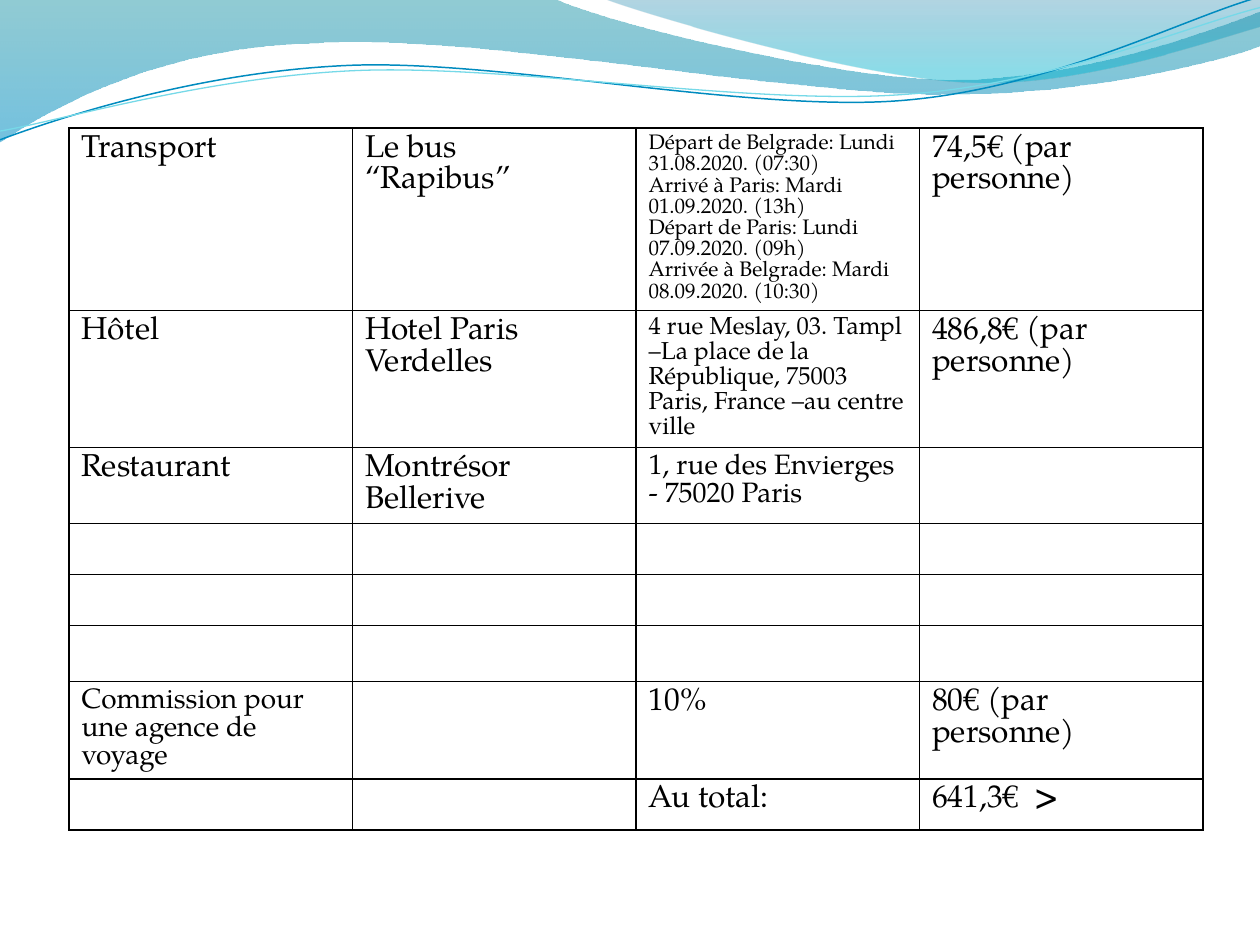
from lxml import etree
from pptx import Presentation, util as u
from pptx.dml.color import RGBColor
from pptx.oxml import ns

FONT = "TeX Gyre Pagella"
BLACK = "000000"
COLUMN_WIDTH = 162
ROW_HEIGHTS = [104.4, 78.2, 43.4, 29.2, 29.2, 32, 55.4, 29.2]

# Each path has a start point; a pair continues it as a line, six numbers as a curve.
BROAD_WAVE = [
    (0, 0), (316.8, -0.7),
    (342.7, 12.2, 478.1, 45.4, 545.8, 45.4),
    (614.2, 45.4, 689.8, 18.7, 720, 6.5),
    (720.7, 25.9),
    (707.8, 31.7, 626.4, 54.7, 537.1, 54),
    (447.8, 54, 275, 20.2, 185, 24.5),
    (92.9, 25.9, 33.1, 59.8, -0.7, 81.4),
]
RIGHT_WAVE = [
    (344.9, -0.7),
    (366.5, 7.9, 491, 44.6, 553.7, 46.8),
    (616.3, 49.7, 691.9, 23, 720, 15.1),
    (720, 0),
]
DARK_LINE = [
    (0, 79.9),
    (34.6, 67, 113.8, 41, 199.4, 37.4),
    (284.4, 33.8, 427, 64.1, 513.4, 57.6),
    (599.8, 51.1, 675.4, 10.8, 718.6, -1.4),
]
LIGHT_LINE = [
    (0, 74.9),
    (33.8, 69.1, 118.1, 43.9, 203.8, 40.3),
    (290.2, 36.7, 429.8, 60.5, 516.2, 54),
    (601.9, 48.2, 677.5, 15.1, 720, 4.3),
]

# (row, column): (font size, paragraphs)
BUDGET = {
    (0, 0): (18, ["Transport"]),
    (0, 1): (18, ["Le bus", "“Rapibus”"]),
    (0, 2): (12, ["Départ de Belgrade: Lundi 31.08.2020. (07:30)",
                  "Arrivé à Paris: Mardi 01.09.2020. (13h)",
                  "Départ de Paris: Lundi 07.09.2020. (09h)",
                  "Arrivée à Belgrade: Mardi 08.09.2020. (10:30)"]),
    (0, 3): (18, ["74,5€ (par personne)"]),
    (1, 0): (18, ["Hôtel"]),
    (1, 1): (18, ["Hotel Paris Verdelles"]),
    (1, 2): (14, ["4 rue Meslay, 03. Tampl –La place de la République, "
                  "75003 Paris, France –au centre ville"]),
    (1, 3): (18, ["486,8€ (par personne)"]),
    (2, 0): (18, ["Restaurant"]),
    (2, 1): (18, ["Montrésor Bellerive"]),
    (2, 2): (16, ["1, rue des Envierges - 75020 Paris"]),
    (6, 0): (16, ["Commission pour une agence de voyage"]),
    (6, 2): (18, ["10%"]),
    (6, 3): (18, ["80€ (par personne)"]),
    (7, 2): (18, ["Au total:"]),
    (7, 3): (18, ["641,3€  "]),
}


def rgb(value):
    return RGBColor.from_string(value)


def add_outline(slide, path_parts, close):
    """Draw lines through all points, then join each curve's three into a Bézier."""
    points = [(u.Pt(x), u.Pt(y)) for part in path_parts
              for x, y in zip(part[::2], part[1::2])]
    builder = slide.shapes.build_freeform(*points[0])
    builder.add_line_segments(points[1:], close=close)
    outline = builder.convert_to_shape()
    outline.shadow.inherit = False
    segments = iter(list(outline.element.iter(ns.qn("a:lnTo"))))
    for part in path_parts[1:]:
        segment = next(segments)
        if len(part) == 6:
            curve = etree.Element(ns.qn("a:cubicBezTo"))
            segment.addprevious(curve)
            for line in (segment, next(segments), next(segments)):
                curve.append(line[0])
                line.getparent().remove(line)
    return outline


def add_wave(slide, path_parts, stops):
    """Filled wave; each stop is position, colour and opacity in percent."""
    wave = add_outline(slide, path_parts, close=True)
    wave.line.fill.background()
    wave.fill.gradient()
    wave.fill.gradient_angle = 270
    for stop, (position, color, _) in zip(wave.fill.gradient_stops, stops):
        stop.position = position / 100
        stop.color.rgb = rgb(color)
    for node, (_, _, opacity) in zip(wave.element.iter(ns.qn("a:srgbClr")), stops):
        etree.SubElement(node, ns.qn("a:alpha"), val=str(opacity * 1000))


def add_wave_line(slide, path_parts, color, width):
    line = add_outline(slide, path_parts, close=False)
    line.fill.background()
    line.line.color.rgb = rgb(color)
    line.line.width = u.Pt(width)


def set_borders(cell, color, width):
    properties = cell._tc.get_or_add_tcPr()
    for side in ("lnL", "lnR", "lnT", "lnB"):
        border = etree.SubElement(properties, ns.qn(f"a:{side}"), w=str(u.Pt(width)))
        fill = etree.SubElement(border, ns.qn("a:solidFill"))
        etree.SubElement(fill, ns.qn("a:srgbClr"), val=color)


def write_cell(cell, size, paragraphs):
    cell.text = "\n".join(paragraphs)
    for paragraph in cell.text_frame.paragraphs:
        paragraph.font.name = FONT
        paragraph.font.size = u.Pt(size)
        paragraph.font.color.rgb = rgb(BLACK)


def add_budget(slide):
    table = slide.shapes.add_table(
        len(ROW_HEIGHTS), 4, u.Pt(39.4), u.Pt(73.1),
        u.Pt(4 * COLUMN_WIDTH), u.Pt(sum(ROW_HEIGHTS))).table
    table.first_row = table.horz_banding = False
    for column in table.columns:
        column.width = u.Pt(COLUMN_WIDTH)
    for row, height in zip(table.rows, ROW_HEIGHTS):
        row.height = u.Pt(height)
    for cell in table.iter_cells():
        set_borders(cell, BLACK, 1)
        cell.fill.background()
    for position, (size, paragraphs) in BUDGET.items():
        write_cell(table.cell(*position), size, paragraphs)
    more_sign = table.cell(7, 3).text_frame.paragraphs[0].add_run()
    more_sign.text = ">"
    more_sign.font.bold = True


def main():
    deck = Presentation()
    deck.slide_width, deck.slide_height = u.Pt(720), u.Pt(540)
    slide = deck.slides.add_slide(deck.slide_layouts[6])
    add_wave(slide, BROAD_WAVE, [(0, "0C8DA0", 45), (100, "008EC5", 55)])
    add_wave(slide, RIGHT_WAVE, [(0, "0074A1", 30), (80, "00B3CE", 45)])
    add_wave_line(slide, DARK_LINE, "008BBF", 0.85)
    add_wave_line(slide, LIGHT_LINE, "76D9E8", 0.75)
    add_budget(slide)
    deck.save("out.pptx")


if __name__ == "__main__":
    main()
